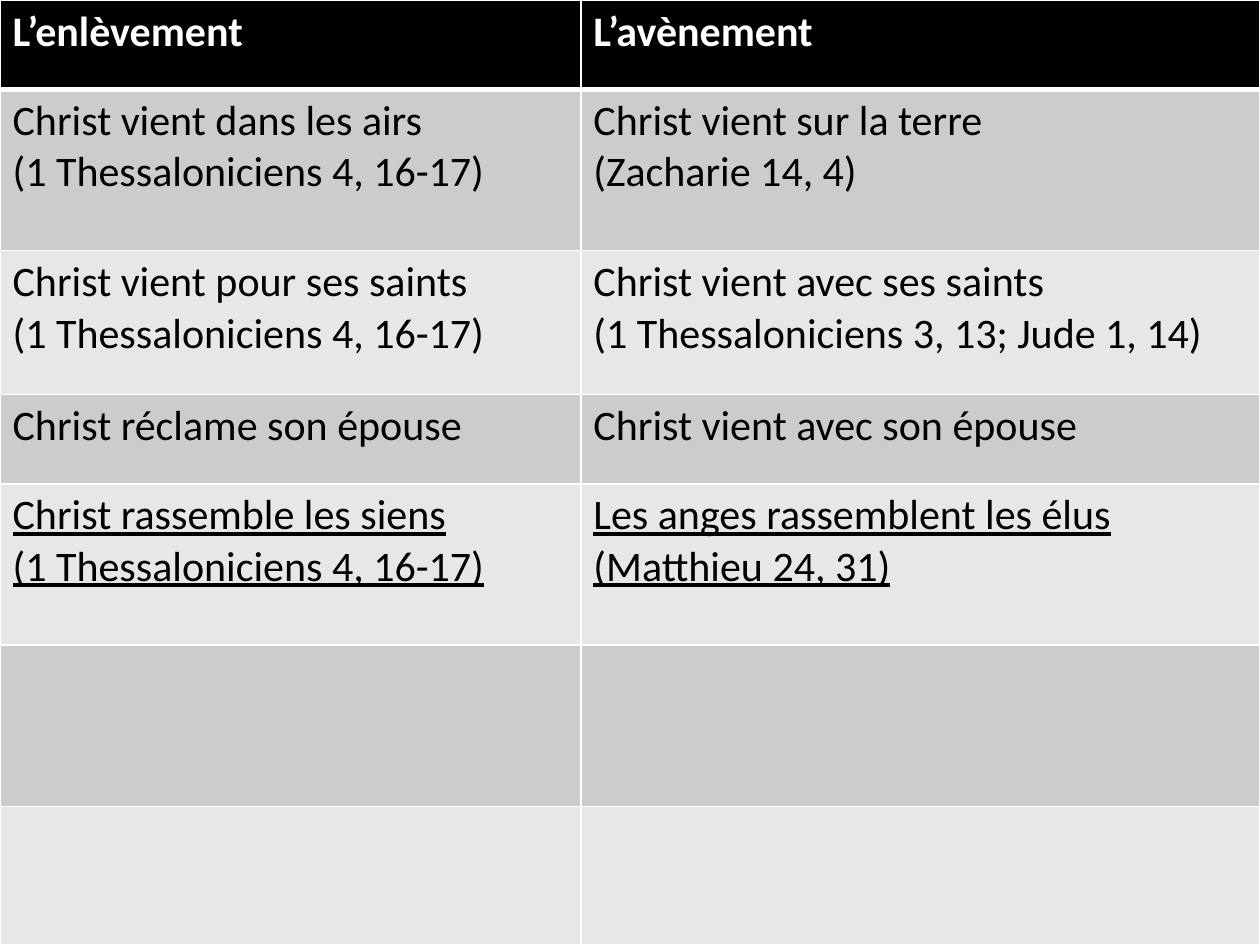
from dataclasses import dataclass

from lxml import etree
from pptx import Presentation
from pptx import util as u
from pptx.dml.color import RGBColor
from pptx.oxml import ns

WHITE = RGBColor(0xFF, 0xFF, 0xFF)
BLACK = RGBColor(0x00, 0x00, 0x00)
DARK_BAND = RGBColor(0xCC, 0xCC, 0xCC)
LIGHT_BAND = RGBColor(0xE7, 0xE7, 0xE7)
FONT = "Calibri"
COLUMN_WIDTHS = (4.61, 5.39)


@dataclass
class Row:
    height: float
    rapture: tuple[str, ...] = ()
    advent: tuple[str, ...] = ()
    underline: bool = False


ROWS = [
    Row(0.71, ("L’enlèvement",), ("L’avènement",)),
    Row(1.28, ("Christ vient dans les airs", "(1 Thessaloniciens 4, 16-17)"),
        ("Christ vient sur la terre", "(Zacharie 14, 4)")),
    Row(1.14, ("Christ vient pour ses saints", "(1 Thessaloniciens 4, 16-17)"),
        ("Christ vient avec ses saints", "(1 Thessaloniciens 3, 13; Jude 1, 14)")),
    Row(0.71, ("Christ réclame son épouse",), ("Christ vient avec son épouse",)),
    Row(1.28, ("Christ rassemble les siens", "(1 Thessaloniciens 4, 16-17)"),
        ("Les anges rassemblent les élus", "(Matthieu 24, 31)"), underline=True),
    Row(1.28),
    Row(1.1),
]


def write_lines(cell, lines: tuple[str, ...], *, color: RGBColor,
                bold: bool = False, underline: bool = False) -> None:
    frame = cell.text_frame
    for index, line in enumerate(lines):
        para = frame.paragraphs[0] if index == 0 else frame.add_paragraph()
        span = para.add_run()
        span.text = line
        span.font.name = FONT
        span.font.size = u.Pt(24)
        span.font.color.rgb = color
        span.font.bold = bold
        span.font.underline = underline


def set_borders(cell, *, top: float = 1, bottom: float = 1) -> None:
    properties = cell._tc.get_or_add_tcPr()
    widths = {"a:lnL": 1, "a:lnR": 1, "a:lnT": top, "a:lnB": bottom}
    for tag, width in widths.items():
        line = etree.SubElement(properties, ns.qn(tag), w=str(u.Pt(width)))
        fill = etree.SubElement(line, ns.qn("a:solidFill"))
        etree.SubElement(fill, ns.qn("a:srgbClr"), val=str(WHITE))


def set_fill(cell, color: RGBColor) -> None:
    cell.fill.solid()
    cell.fill.fore_color.rgb = color


def draw_comparison(page, rows: list[Row]) -> None:
    table = page.shapes.add_table(len(rows), len(COLUMN_WIDTHS), 0, 0,
                                  u.Inches(10), u.Inches(7.5)).table
    for column, width in zip(table.columns, COLUMN_WIDTHS):
        column.width = u.Inches(width)

    for index, row in enumerate(rows):
        table.rows[index].height = u.Inches(row.height)
        header = index == 0
        band = BLACK if header else DARK_BAND if index % 2 else LIGHT_BAND
        for column, lines in enumerate((row.rapture, row.advent)):
            cell = table.cell(index, column)
            # The heavy rule lies between the header and the first row
            set_borders(cell, top=3 if index == 1 else 1, bottom=3 if header else 1)
            set_fill(cell, band)
            write_lines(cell, lines, color=WHITE if header else BLACK,
                        bold=header, underline=row.underline)


def main() -> None:
    deck = Presentation()
    deck.slide_width, deck.slide_height = u.Inches(10), u.Inches(7.5)
    # Blank layout: the table fills the whole page
    page = deck.slides.add_slide(deck.slide_layouts[6])
    draw_comparison(page, ROWS)
    deck.save("out.pptx")


if __name__ == "__main__":
    main()
